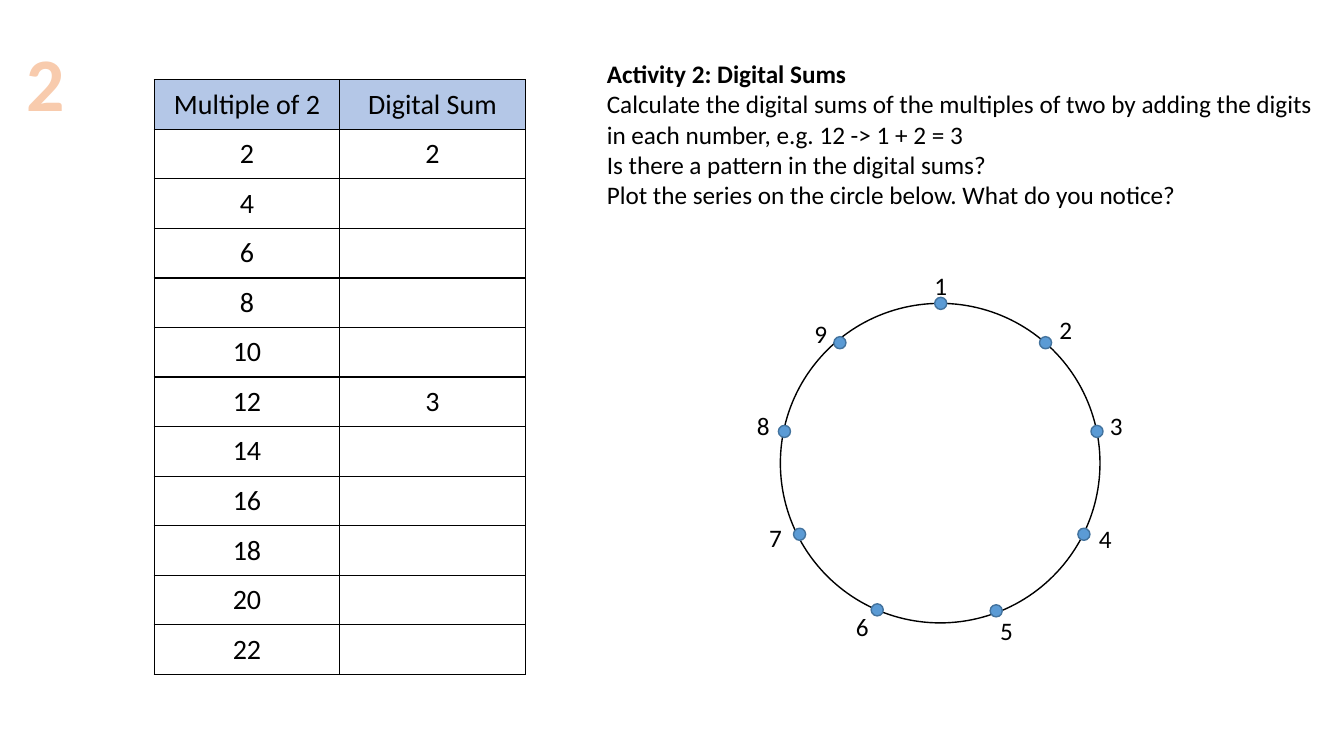
from typing import NamedTuple

from lxml.etree import SubElement
from pptx import Presentation
from pptx.dml.color import RGBColor
from pptx.enum.shapes import MSO_SHAPE
from pptx.enum.text import MSO_ANCHOR, MSO_AUTO_SIZE, PP_ALIGN
from pptx.oxml.ns import qn
from pptx.util import Emu, Pt

EMU_PER_PX = 9144  # 100 px to the inch
FONT = "Calibri"
COLORS = {
    "black": "000000",
    "header": "B4C7E7",
    "dot": "5B9BD5",
    "dot_line": "43739E",
    "number": "F8CBAD",
    "number_line": "ED7D31",
}
DOT_SIZE = 12
LABEL_SIZE = (33, 40)
COLUMN_WIDTH = 184
ROW_HEIGHT = 49.2
DIGITAL_SUMS = {2: "2", 12: "3"}
ROWS = [("Multiple of 2", "Digital Sum")] + [
    (str(multiple), DIGITAL_SUMS.get(multiple, "")) for multiple in range(2, 23, 2)
]


class Box(NamedTuple):
    left: int
    top: int
    width: int
    height: int


class CirclePoint(NamedTuple):
    dot_left: int
    dot_top: int
    label_left: int
    label_top: int


class Line(NamedTuple):
    text: str
    bold: bool = False


POINTS = [
    CirclePoint(927, 295, 917, 263),
    CirclePoint(1031, 334, 1041, 307),
    CirclePoint(1082, 422, 1091, 402),
    CirclePoint(1069, 524, 1080, 514),
    CirclePoint(982, 600, 982, 606),
    CirclePoint(864, 599, 839, 602),
    CirclePoint(787, 524, 753, 513),
    CirclePoint(772, 422, 741, 402),
    CirclePoint(827, 334, 798, 311),
]
INSTRUCTIONS = [
    Line("Activity 2: Digital Sums", bold=True),
    Line(
        "Calculate the digital sums of the multiples of two by adding the digits "
        "in each number, e.g. 12 -> 1 + 2 = 3"
    ),
    Line("Is there a pattern in the digital sums?"),
    Line("Plot the series on the circle below. What do you notice?"),
]


def px(value: float) -> Emu:
    return Emu(round(value * EMU_PER_PX))


def color(name: str) -> RGBColor:
    return RGBColor.from_string(COLORS[name])


def add_run(paragraph, text: str, size: int, color_name: str = "black", bold: bool = False):
    run = paragraph.add_run()
    run.text = text
    run.font.name = FONT
    run.font.size = Pt(size)
    run.font.bold = bold
    run.font.color.rgb = color(color_name)
    return run


def add_text_box(shapes, box: Box, wrap: bool = False):
    text_box = shapes.add_textbox(*map(px, box))
    text_box.text_frame.word_wrap = wrap
    text_box.text_frame.auto_size = MSO_AUTO_SIZE.SHAPE_TO_FIT_TEXT
    return text_box.text_frame


def add_ellipse(shapes, box: Box, line: str, fill: str = "") -> None:
    shape = shapes.add_shape(MSO_SHAPE.OVAL, *map(px, box))
    shape.shadow.inherit = False
    shape.line.color.rgb = color(line)
    shape.line.width = Pt(1)
    if fill:
        shape.fill.solid()
        shape.fill.fore_color.rgb = color(fill)
    else:
        shape.fill.background()


def append_line(parent, tag: str, width: float, color_name: str):
    """Append a solid DrawingML line to an XML element."""
    line = SubElement(parent, qn(tag), w=str(Pt(width)))
    fill = SubElement(line, qn("a:solidFill"))
    SubElement(fill, qn("a:srgbClr"), val=COLORS[color_name])
    return line


def add_multiples_table(shapes) -> None:
    box = Box(153, 79, COLUMN_WIDTH * 2, round(ROW_HEIGHT * len(ROWS)))
    table = shapes.add_table(len(ROWS), 2, *map(px, box)).table
    table.first_row = False
    table.horz_banding = False
    for column in table.columns:
        column.width = px(COLUMN_WIDTH)
    for row_index, texts in enumerate(ROWS):
        table.rows[row_index].height = px(ROW_HEIGHT)
        for column_index, text in enumerate(texts):
            cell = table.cell(row_index, column_index)
            cell.vertical_anchor = MSO_ANCHOR.MIDDLE
            for side in "LRTB":
                append_line(cell._tc.get_or_add_tcPr(), f"a:ln{side}", 1, "black")
            if row_index == 0:
                cell.fill.solid()
                cell.fill.fore_color.rgb = color("header")
            else:
                cell.fill.background()
            if text:
                paragraph = cell.text_frame.paragraphs[0]
                paragraph.alignment = PP_ALIGN.CENTER
                add_run(paragraph, text, 20)


def add_instructions(shapes) -> None:
    frame = add_text_box(shapes, Box(592, 53, 722, 162), wrap=True)
    for index, line in enumerate(INSTRUCTIONS):
        paragraph = frame.add_paragraph() if index else frame.paragraphs[0]
        add_run(paragraph, line.text, 18, bold=line.bold)


def add_number_circle(shapes) -> None:
    group = shapes.add_group_shape()
    add_ellipse(group.shapes, Box(774, 301, 317, 317), "black")
    for number, point in enumerate(POINTS, start=1):
        dot = Box(point.dot_left, point.dot_top, DOT_SIZE, DOT_SIZE)
        add_ellipse(group.shapes, dot, "dot_line", "dot")
        label = Box(point.label_left, point.label_top, *LABEL_SIZE)
        frame = add_text_box(group.shapes, label)
        add_run(frame.paragraphs[0], str(number), 18)


def add_activity_number(shapes) -> None:
    paragraph = add_text_box(shapes, Box(16, 31, 59, 101)).paragraphs[0]
    paragraph.alignment = PP_ALIGN.CENTER
    run = add_run(paragraph, "2", 54, "number", bold=True)
    properties = run._r.get_or_add_rPr()
    properties.insert(0, append_line(properties, "a:ln", 1.75, "number_line"))


def main() -> None:
    presentation = Presentation()
    presentation.slide_width = px(1333)
    presentation.slide_height = px(750)
    slide = presentation.slides.add_slide(presentation.slide_layouts[6])
    add_multiples_table(slide.shapes)
    add_instructions(slide.shapes)
    add_number_circle(slide.shapes)
    add_activity_number(slide.shapes)
    presentation.save("out.pptx")


if __name__ == "__main__":
    main()
